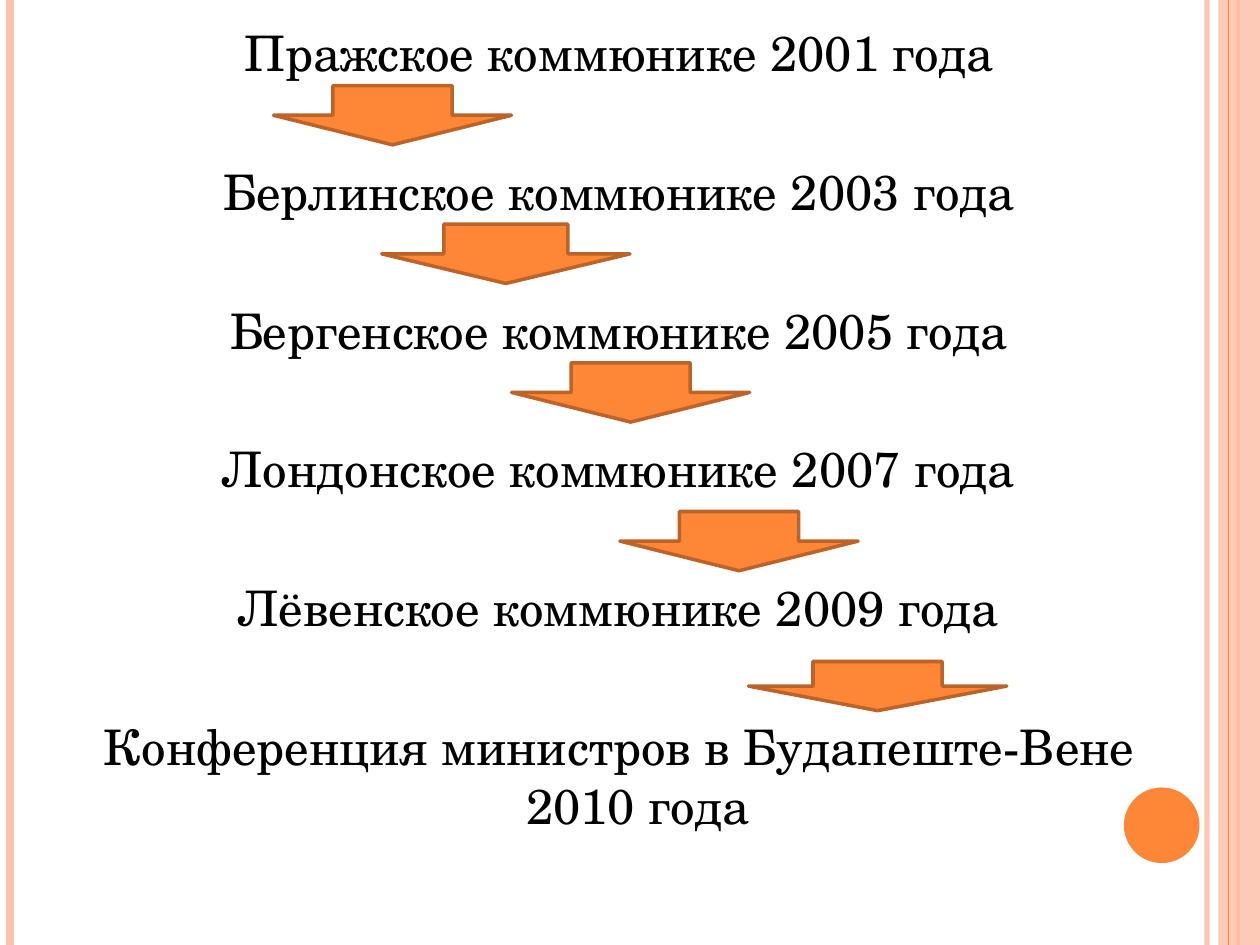
import pptx
import pptx.dml.color
import pptx.enum.shapes
import pptx.enum.text
import pptx.oxml.ns
import pptx.util
from lxml import etree

Inches = pptx.util.Inches
Pt = pptx.util.Pt
RGBColor = pptx.dml.color.RGBColor
Preset = pptx.enum.shapes.MSO_SHAPE
qn = pptx.oxml.ns.qn

PEACH = RGBColor(0xFE, 0xC3, 0xAE)
ORANGE = RGBColor(0xFE, 0x86, 0x37)
BROWN = RGBColor(0xBC, 0x63, 0x29)
BLACK = RGBColor(0, 0, 0)

SLIDE_WIDTH = 10
SLIDE_HEIGHT = 7.5

STAGES = [
    "Пражское коммюнике 2001 года",
    "Берлинское коммюнике 2003 года",
    "Бергенское коммюнике 2005 года",
    "Лондонское коммюнике 2007 года",
    "Лёвенское коммюнике 2009 года",
    "Конференция министров в Будапеште-Вене 2010 года",
]
STEP_ARROWS = [
    (2.17, 0.68, 1.89, 0.47),
    (3.03, 1.78, 1.97, 0.47),
    (4.06, 2.88, 1.89, 0.47),
    (4.92, 4.06, 1.89, 0.47),
    (5.94, 5.25, 2.05, 0.39),
]


def set_opacity(properties, percent):
    color = properties.find(".//" + qn("a:srgbClr"))
    etree.SubElement(color, qn("a:alpha"), val=str(percent * 1000))


def add_stripe(slide, x, color, width, opacity=100):
    stripe = slide.shapes.add_connector(
        pptx.enum.shapes.MSO_CONNECTOR.STRAIGHT,
        Inches(x), Inches(0), Inches(x), Inches(SLIDE_HEIGHT),
    )
    stripe.line.color.rgb = color
    stripe.line.width = Pt(width)
    properties = stripe.line._get_or_add_ln().getparent()
    etree.SubElement(properties, qn("a:effectLst"))
    if opacity < 100:
        set_opacity(properties, opacity)


def add_figure(slide, preset, bounds, fill, outline=None, opacity=100):
    figure = slide.shapes.add_shape(preset, *map(Inches, bounds))
    figure.shadow.inherit = False
    figure.fill.solid()
    figure.fill.fore_color.rgb = fill
    if opacity < 100:
        set_opacity(figure.element.spPr, opacity)
    if outline is None:
        figure.line.fill.background()
    else:
        figure.line.color.rgb = outline
        figure.line.width = Pt(2)


def add_text(slide, bounds, lines, *, font, size, color, gap, indent):
    box = slide.shapes.add_textbox(*map(Inches, bounds))
    frame = box.text_frame
    frame.word_wrap = True
    for index, line in enumerate(lines):
        paragraph = frame.paragraphs[0] if index == 0 else frame.add_paragraph()
        paragraph.alignment = pptx.enum.text.PP_ALIGN.CENTER
        properties = paragraph._p.get_or_add_pPr()
        properties.set("marL", str(Inches(indent)))
        properties.set("indent", str(Inches(-indent)))
        if index:
            paragraph.space_before = Pt(gap)
        run = paragraph.add_run()
        run.text = line
        run.font.name = font
        run.font.size = Pt(size)
        run.font.color.rgb = color


def add_side_decoration(slide):
    add_stripe(slide, 9.58, PEACH, 3, opacity=93)
    add_stripe(slide, 0.08, PEACH, 4.5)
    add_stripe(slide, 9.83, ORANGE, 1.5)
    add_figure(slide, Preset.RECTANGLE, (9.67, 0, 0.33, SLIDE_HEIGHT), PEACH, opacity=87)
    add_stripe(slide, 9.75, ORANGE, 0.75)
    add_figure(slide, Preset.OVAL, (8.92, 6.25, 0.6, 0.6), ORANGE)


def main():
    deck = pptx.Presentation()
    deck.slide_width = Inches(SLIDE_WIDTH)
    deck.slide_height = Inches(SLIDE_HEIGHT)
    slide = deck.slides.add_slide(deck.slide_layouts[6])

    add_side_decoration(slide)
    add_text(
        slide, (0.35, 0.13, 9.13, 6.95), STAGES,
        font="TeX Gyre Schola", size=28, color=BLACK, gap=45.7, indent=0.3,
    )
    for bounds in STEP_ARROWS:
        add_figure(slide, Preset.DOWN_ARROW, bounds, ORANGE, outline=BROWN)

    deck.save("out.pptx")


if __name__ == "__main__":
    main()
